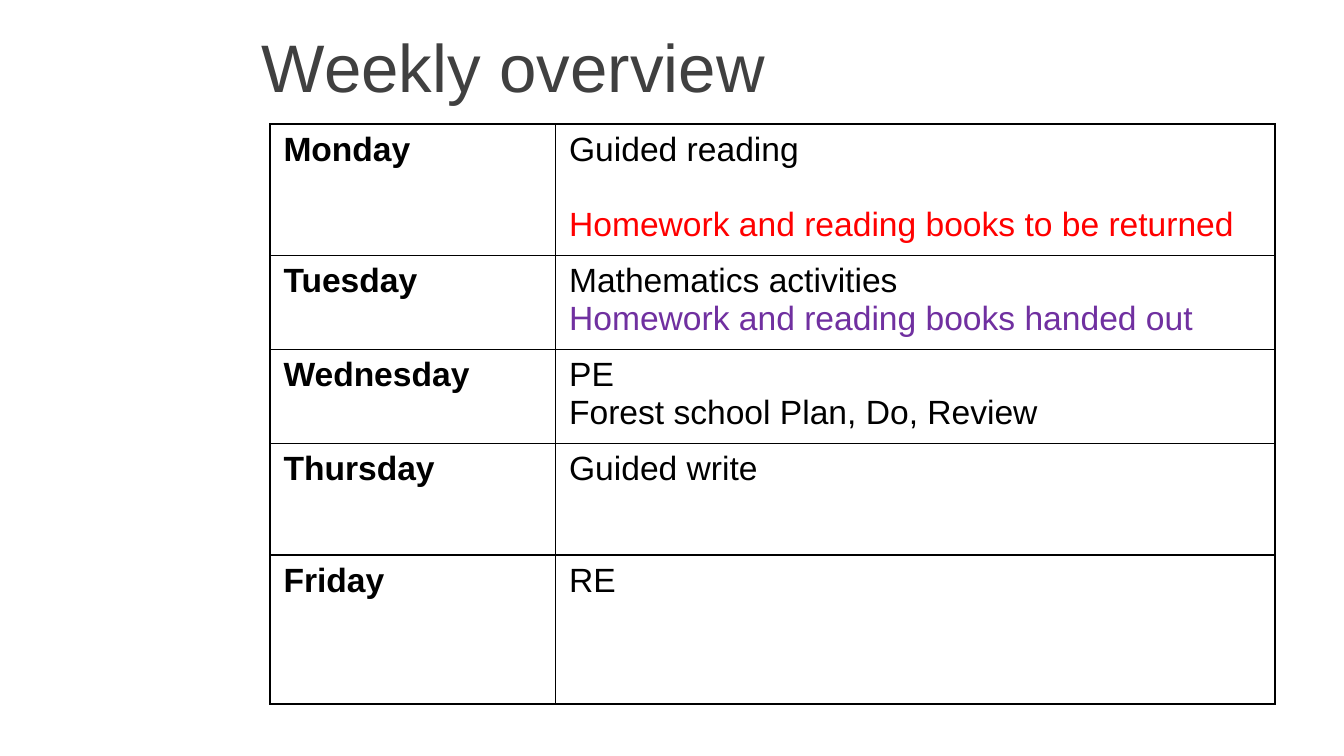
from lxml import etree
from pptx import Presentation
from pptx.dml.color import RGBColor
from pptx.enum import text
from pptx.oxml import ns
from pptx.util import Pt

HUES = {"title": "404040", "ink": "000000", "back": "FFFFFF",
        "due": "FF0000", "out": "7030A0"}


def write(frame, line, size=18, hue="ink", bold=False, gap=0, first=True):
    """Write one formatted paragraph, in the first place or after the rest."""
    para = frame.paragraphs[0] if first else frame.add_paragraph()
    if gap:
        para.space_before = Pt(gap)
    run = para.add_run()
    run.text = line
    font = run.font
    font.name = "Arial"
    font.size = Pt(size)
    font.bold = bold
    font.color.rgb = RGBColor.from_string(HUES[hue])


def frame_cell(cell):
    """Fill a cell and draw its four borders."""
    cell.fill.solid()
    cell.fill.fore_color.rgb = RGBColor.from_string(HUES["back"])
    props = cell._tc.get_or_add_tcPr()
    for spot, side in enumerate(("lnL", "lnR", "lnT", "lnB")):
        edge = etree.Element(ns.qn("a:" + side), w=str(Pt(1)))
        fill = etree.SubElement(edge, ns.qn("a:solidFill"))
        etree.SubElement(fill, ns.qn("a:srgbClr"), val=HUES["ink"])
        props.insert(spot, edge)


deck = Presentation()
deck.slide_width, deck.slide_height = Pt(720), Pt(405)
slide = deck.slides.add_slide(deck.slide_layouts[6])

# Title
box = slide.shapes.add_textbox(Pt(133.2), Pt(10), Pt(586.8), Pt(45.4))
head = box.text_frame
head.word_wrap = True
head.vertical_anchor = text.MSO_ANCHOR.MIDDLE
head.margin_top, head.margin_bottom = Pt(4.8), Pt(0)
write(head, "Weekly overview", size=36, hue="title")

# Days: name, row height, lines of (text, colour, space before)
days = [
    ("Monday", 67.7, [("Guided reading", "ink", 0),
                      ("Homework and reading books to be returned", "due", 20)]),
    ("Tuesday", 47.5, [("Mathematics activities", "ink", 0),
                       ("Homework and reading books handed out", "out", 0)]),
    ("Wednesday", 47.5, [("PE", "ink", 0),
                         ("Forest school Plan, Do, Review", "ink", 0)]),
    ("Thursday", 59.6, [("Guided write", "ink", 0)]),
    ("Friday", 79.8, [("RE", "ink", 0)]),
]
wide = (153, 385.5)

# Timetable
tall = sum(day[1] for day in days)
grid = slide.shapes.add_table(len(days), len(wide), Pt(144.7), Pt(66.4),
                              Pt(sum(wide)), Pt(tall)).table
grid.first_row = grid.horz_banding = False
for col, width in zip(grid.columns, wide):
    col.width = Pt(width)
for row, (name, high, lines) in zip(grid.rows, days):
    row.height = Pt(high)
    left, right = row.cells
    frame_cell(left)
    frame_cell(right)
    write(left.text_frame, name, bold=True)
    for spot, (line, hue, gap) in enumerate(lines):
        write(right.text_frame, line, hue=hue, gap=gap, first=spot == 0)

deck.save("out.pptx")
